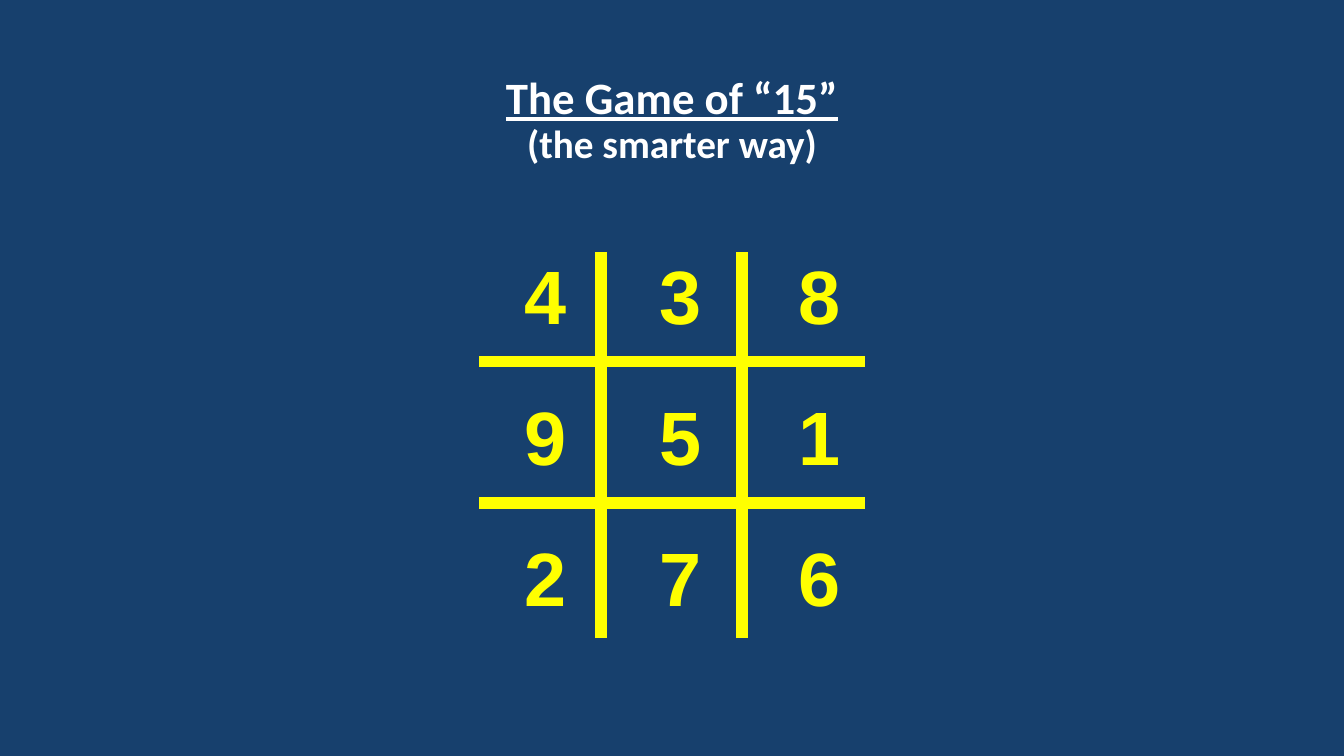
import dataclasses

import pptx
import pptx.dml.color
import pptx.enum.shapes
import pptx.enum.text
import pptx.oxml.ns
import pptx.shapes.shapetree
import pptx.slide
import pptx.text.text
import pptx.util
from lxml import etree

Inches = pptx.util.Inches
Pt = pptx.util.Pt


@dataclasses.dataclass(frozen=True)
class Theme:
    back: str = "17406D"
    head: str = "FFFFFF"
    mark: str = "FFFF00"
    head_font: str = "Calibri"
    mark_font: str = "Arial"
    head_size: int = 32
    sub_size: int = 28
    mark_size: int = 54
    bar_width: int = 8


@dataclasses.dataclass(frozen=True)
class Bar:
    left: float
    top: float
    right: float
    bottom: float


@dataclasses.dataclass(frozen=True)
class Digit:
    text: str
    col: int
    row: int


THEME = Theme()
WIDTH, HEIGHT = 13.33, 7.5

# Board grid, in inches
SQUARE = ("438", "951", "276")
COLS = (5.1, 6.44, 7.82)
TOP, PITCH = 2.42, 1.4
BOX_W, BOX_H = 0.62, 1.0
LEFT, RIGHT = 4.75, 8.58
UPPER, LOWER = 2.5, 6.33
BAR_X, BAR_Y = 5.96, 3.59

BARS = [Bar(LEFT, BAR_Y + i * PITCH, RIGHT, BAR_Y + i * PITCH) for i in range(2)]
BARS += [Bar(BAR_X + i * PITCH, LOWER, BAR_X + i * PITCH, UPPER) for i in range(2)]
DIGITS = [
    Digit(text, col, row)
    for row, line in enumerate(SQUARE)
    for col, text in enumerate(line)
]


def color(code: str) -> pptx.dml.color.RGBColor:
    return pptx.dml.color.RGBColor.from_string(code)


def style(font: pptx.text.text.Font, name: str, size: int, code: str) -> None:
    font.name, font.size, font.bold = name, Pt(size), True
    font.color.rgb = color(code)


def draw_title(slide: pptx.slide.Slide) -> None:
    title = slide.shapes.title
    title.left, title.top = Inches(WIDTH / 8), Inches(0.58)
    title.width, title.height = Inches(WIDTH * 3 / 4), Inches(1.25)
    frame = title.text_frame
    frame.auto_size = pptx.enum.text.MSO_AUTO_SIZE.NONE
    frame.vertical_anchor = pptx.enum.text.MSO_ANCHOR.MIDDLE
    para = frame.paragraphs[0]
    para.alignment = pptx.enum.text.PP_ALIGN.CENTER
    para.line_spacing = 0.9
    head = para.add_run()
    head.text = "The Game of “15”"
    para.add_line_break()
    sub = para.add_run()
    sub.text = "(the smarter way)"
    for run, size in ((head, THEME.head_size), (sub, THEME.sub_size)):
        style(run.font, THEME.head_font, size, THEME.head)
    head.font.underline = True


def draw_bar(shapes: pptx.shapes.shapetree.GroupShapes, bar: Bar) -> None:
    line = shapes.add_connector(
        pptx.enum.shapes.MSO_CONNECTOR.STRAIGHT,
        Inches(bar.left), Inches(bar.top), Inches(bar.right), Inches(bar.bottom),
    )
    line.line.color.rgb = color(THEME.mark)
    line.line.width = Pt(THEME.bar_width)
    props = line._element.spPr
    etree.SubElement(props, pptx.oxml.ns.qn("a:effectLst"))


def draw_digit(shapes: pptx.shapes.shapetree.GroupShapes, digit: Digit) -> None:
    box = shapes.add_textbox(
        Inches(COLS[digit.col]), Inches(TOP + digit.row * PITCH),
        Inches(BOX_W), Inches(BOX_H),
    )
    frame = box.text_frame
    frame.word_wrap = False
    frame.auto_size = pptx.enum.text.MSO_AUTO_SIZE.SHAPE_TO_FIT_TEXT
    para = frame.paragraphs[0]
    para.text = digit.text
    style(para.font, THEME.mark_font, THEME.mark_size, THEME.mark)


def main() -> None:
    deck = pptx.Presentation()
    deck.slide_width, deck.slide_height = Inches(WIDTH), Inches(HEIGHT)
    slide = deck.slides.add_slide(deck.slide_layouts.get_by_name("Title Only"))
    fill = slide.background.fill
    fill.solid()
    fill.fore_color.rgb = color(THEME.back)

    # Heading
    draw_title(slide)

    # Board: bars first, then digits
    board = slide.shapes.add_group_shape().shapes
    for bar in BARS:
        draw_bar(board, bar)
    for digit in DIGITS:
        draw_digit(board, digit)

    deck.save("out.pptx")


if __name__ == "__main__":
    main()
